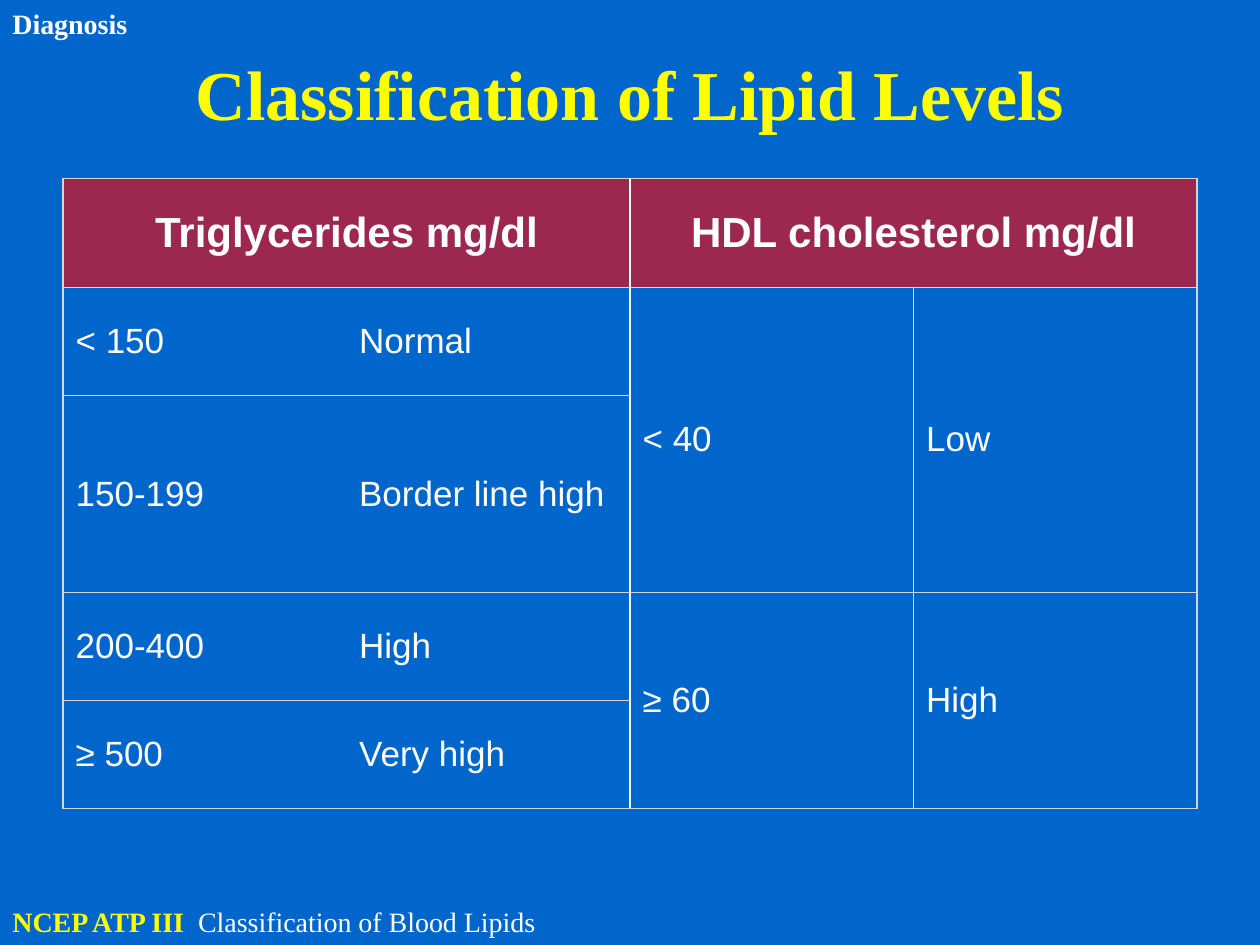
from dataclasses import dataclass

from lxml.etree import SubElement
from pptx import Presentation
from pptx.dml.color import RGBColor
from pptx.enum.text import MSO_ANCHOR, MSO_AUTO_SIZE, PP_ALIGN
from pptx.oxml import parse_xml
from pptx.oxml.ns import nsdecls, qn
from pptx.util import Inches, Pt


@dataclass(frozen=True)
class Theme:
    background: str = "0066CC"
    accent: str = "FFFF00"
    text: str = "FFFFFF"
    header_fill: str = "FF0000"
    header_opacity: int = 61
    grid: str = "D5D5D5"
    serif: str = "Times New Roman"
    sans: str = "Arial"
    title_size: int = 40
    header_size: int = 24
    body_size: int = 20
    label_size: int = 16


THEME = Theme()

COLUMN_WIDTH = 2.25
ROW_HEIGHTS = [0.86, 0.86, 1.56, 0.86, 0.86]

# (row, column, row span, column span, text)
CELLS = [
    (0, 0, 1, 2, "Triglycerides mg/dl"),
    (0, 2, 1, 2, "HDL cholesterol mg/dl"),
    (1, 0, 1, 1, "< 150"),
    (1, 1, 1, 1, "Normal"),
    (2, 0, 1, 1, "150-199"),
    (2, 1, 1, 1, "Border line high"),
    (3, 0, 1, 1, "200-400"),
    (3, 1, 1, 1, "High"),
    (4, 0, 1, 1, "≥ 500"),
    (4, 1, 1, 1, "Very high"),
    (1, 2, 2, 1, "< 40"),
    (1, 3, 2, 1, "Low"),
    (3, 2, 2, 1, "≥ 60"),
    (3, 3, 2, 1, "High"),
]


def add_run(paragraph, text, color, **font_format):
    run = paragraph.add_run()
    run.text = text
    for name, value in font_format.items():
        setattr(run.font, name, value)
    run.font.color.rgb = RGBColor.from_string(color)
    return run


def add_text_shadow(run):
    effects = parse_xml(
        f'<a:effectLst {nsdecls("a")}>'
        '<a:outerShdw dist="71842" dir="2700000" algn="ctr">'
        '<a:srgbClr val="000000"><a:alpha val="50000"/></a:srgbClr>'
        "</a:outerShdw></a:effectLst>"
    )
    run.font._element.find(qn("a:solidFill")).addnext(effects)


def add_title(slide, text):
    title = slide.shapes.title
    title.left, title.top, title.width, title.height = map(Inches, (0.5, 0.3, 9, 0.87))
    title.text_frame.vertical_anchor = MSO_ANCHOR.MIDDLE
    paragraph = title.text_frame.paragraphs[0]
    paragraph.alignment = PP_ALIGN.CENTER
    run = add_run(paragraph, text, THEME.accent, name=THEME.serif,
                  size=Pt(THEME.title_size), bold=True)
    add_text_shadow(run)


def add_label(slide, top, width, runs):
    """Add a one-line label at the left edge; runs are (text, color, bold)."""
    box = slide.shapes.add_textbox(0, Inches(top), Inches(width), Inches(0.37))
    frame = box.text_frame
    frame.word_wrap = False
    frame.auto_size = MSO_AUTO_SIZE.SHAPE_TO_FIT_TEXT
    for text, color, bold in runs:
        add_run(frame.paragraphs[0], text, color, name=THEME.serif,
                size=Pt(THEME.label_size), bold=bold)


def set_borders(cell, column, column_span):
    """Draw every side but the one between a range and its class."""
    boundaries = {"lnL": column, "lnR": column + column_span, "lnT": None, "lnB": None}
    properties = cell._tc.get_or_add_tcPr()
    for tag, boundary in boundaries.items():
        is_middle = boundary == 2
        line = SubElement(properties, qn(f"a:{tag}"), w=str(Pt(1 if is_middle else 0.75)))
        if boundary == 1:
            SubElement(line, qn("a:noFill"))
        else:
            fill = SubElement(line, qn("a:solidFill"))
            SubElement(fill, qn("a:srgbClr"), val=THEME.text if is_middle else THEME.grid)


def set_cell_fill(cell, is_header):
    if not is_header:
        cell.fill.background()
        return
    cell.fill.solid()
    cell.fill.fore_color.rgb = RGBColor.from_string(THEME.header_fill)
    color = cell._tc.tcPr.find(f"{qn('a:solidFill')}/{qn('a:srgbClr')}")
    SubElement(color, qn("a:alpha"), val=str(THEME.header_opacity * 1000))


def add_lipid_table(slide):
    row_count, column_count = len(ROW_HEIGHTS), 4
    table = slide.shapes.add_table(
        row_count, column_count, Inches(0.5), Inches(1.42),
        Inches(COLUMN_WIDTH * column_count), Inches(sum(ROW_HEIGHTS))).table
    table.horz_banding = False
    for column in table.columns:
        column.width = Inches(COLUMN_WIDTH)
    for row, height in zip(table.rows, ROW_HEIGHTS):
        row.height = Inches(height)

    for row, column, row_span, column_span, text in CELLS:
        is_header = row == 0
        cell = table.cell(row, column)
        if row_span * column_span > 1:
            cell.merge(table.cell(row + row_span - 1, column + column_span - 1))
        for covered_row in range(row, row + row_span):
            for covered_column in range(column, column + column_span):
                covered = table.cell(covered_row, covered_column)
                set_borders(covered, column, column_span)
                set_cell_fill(covered, is_header)
        cell.vertical_anchor = MSO_ANCHOR.MIDDLE
        paragraph = cell.text_frame.paragraphs[0]
        paragraph.alignment = PP_ALIGN.CENTER if is_header else PP_ALIGN.LEFT
        size = THEME.header_size if is_header else THEME.body_size
        add_run(paragraph, text, THEME.text, name=THEME.sans, size=Pt(size), bold=is_header)


def main():
    presentation = Presentation()
    presentation.slide_width, presentation.slide_height = Inches(10), Inches(7.5)
    slide = presentation.slides.add_slide(presentation.slide_layouts[5])
    slide.background.fill.solid()
    slide.background.fill.fore_color.rgb = RGBColor.from_string(THEME.background)

    add_title(slide, "Classification of Lipid Levels")
    add_lipid_table(slide)
    add_label(slide, 7.13, 4.41, [
        ("NCEP ATP III  ", THEME.accent, True),
        ("Classification of Blood Lipids", THEME.text, False),
    ])
    add_label(slide, 0, 1.12, [("Diagnosis", THEME.text, True)])
    presentation.save("out.pptx")


if __name__ == "__main__":
    main()
